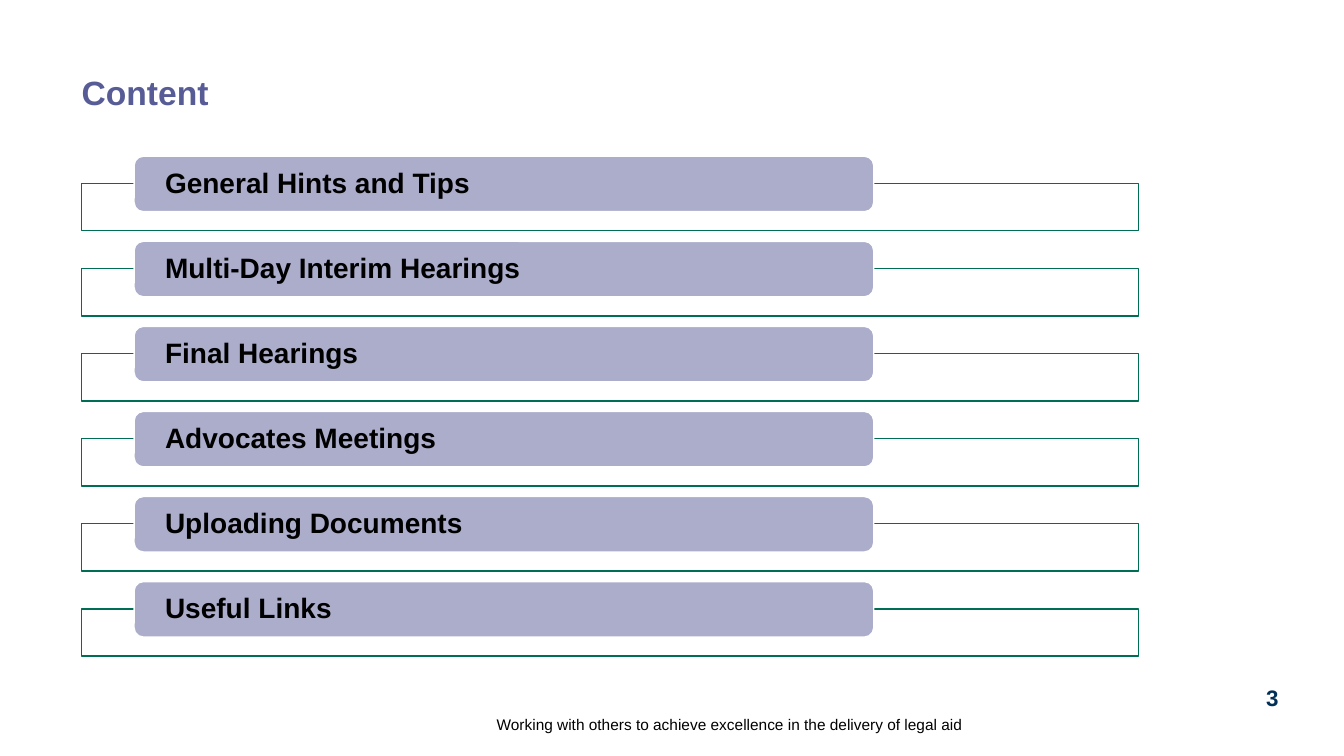
from pptx import Presentation
from pptx.dml.color import RGBColor
from pptx.enum.shapes import MSO_SHAPE
from pptx.enum.text import MSO_ANCHOR, PP_ALIGN
from pptx.util import Pt

EMU_PER_PX = 9144
COLORS = {
    "title": "575C96",
    "bar": "ABADCB",
    "panel_line": "006D55",
    "white": "FFFFFF",
    "text": "000000",
    "number": "003057",
}
TOPICS = [
    "General Hints and Tips",
    "Multi-Day Interim Hearings",
    "Final Hearings",
    "Advocates Meetings",
    "Uploading Documents",
    "Useful Links",
]


def px(length):
    return round(length * EMU_PER_PX)


def color(name):
    return RGBColor.from_string(COLORS[name])


def write_text(shape, text, size, color_name="text", bold=False, align=PP_ALIGN.LEFT,
               anchor=MSO_ANCHOR.TOP, inset=0, line_spacing=1.0):
    frame = shape.text_frame
    frame.word_wrap = True
    frame.vertical_anchor = anchor
    frame.margin_left = frame.margin_right = px(inset)
    frame.margin_top = frame.margin_bottom = 0
    frame.text = text
    paragraph = frame.paragraphs[0]
    paragraph.alignment = align
    paragraph.line_spacing = line_spacing
    paragraph.font.name = "Arial"
    paragraph.font.size = Pt(size)
    paragraph.font.bold = bold
    paragraph.font.color.rgb = color(color_name)


def add_box(slide, kind, left, top, width, height, fill, line):
    shape = slide.shapes.add_shape(kind, px(left), px(top), px(width), px(height))
    shape.shadow.inherit = False
    shape.fill.solid()
    shape.fill.fore_color.rgb = color(fill)
    shape.line.color.rgb = color(line)
    shape.line.width = Pt(1)
    return shape


def add_title(slide, left, top, width, height):
    title = slide.shapes.title
    title.left, title.top = px(left), px(top)
    title.width, title.height = px(width), px(height)
    write_text(title, "Content", 24, color_name="title", bold=True, line_spacing=0.9)


def add_topic_list(slide, left, top, width, height):
    bar_height, panel_offset, panel_height = 55, 27, 47
    row_height = panel_offset + panel_height
    pitch = (height - row_height) / (len(TOPICS) - 1)
    for index, topic in enumerate(TOPICS):
        row_top = top + index * pitch
        add_box(slide, MSO_SHAPE.RECTANGLE, left, row_top + panel_offset,
                width, panel_height, "white", "panel_line")
        bar = add_box(slide, MSO_SHAPE.ROUNDED_RECTANGLE, left + 52, row_top,
                      width * 0.7, bar_height, "bar", "white")
        write_text(bar, topic, 20, bold=True, anchor=MSO_ANCHOR.MIDDLE,
                   inset=28, line_spacing=0.9)


def add_label(slide, text, left, top, width, height, **text_format):
    label = slide.shapes.add_textbox(px(left), px(top), px(width), px(height))
    write_text(label, text, **text_format)


def build_content_slide(presentation):
    slide = presentation.slides.add_slide(presentation.slide_layouts[5])
    add_title(slide, 81, 76, 844, 38)
    add_topic_list(slide, 81, 155, 1048, 496)
    add_label(slide, "Working with others to achieve excellence in the delivery of legal aid",
              210, 692, 745, 36, size=11, align=PP_ALIGN.RIGHT, anchor=MSO_ANCHOR.BOTTOM)
    add_label(slide, "3", 1247, 679, 30, 28, size=16, color_name="number",
              bold=True, align=PP_ALIGN.CENTER)


def main():
    presentation = Presentation()
    presentation.slide_width = px(1333)
    presentation.slide_height = px(750)
    build_content_slide(presentation)
    presentation.save("out.pptx")


if __name__ == "__main__":
    main()
